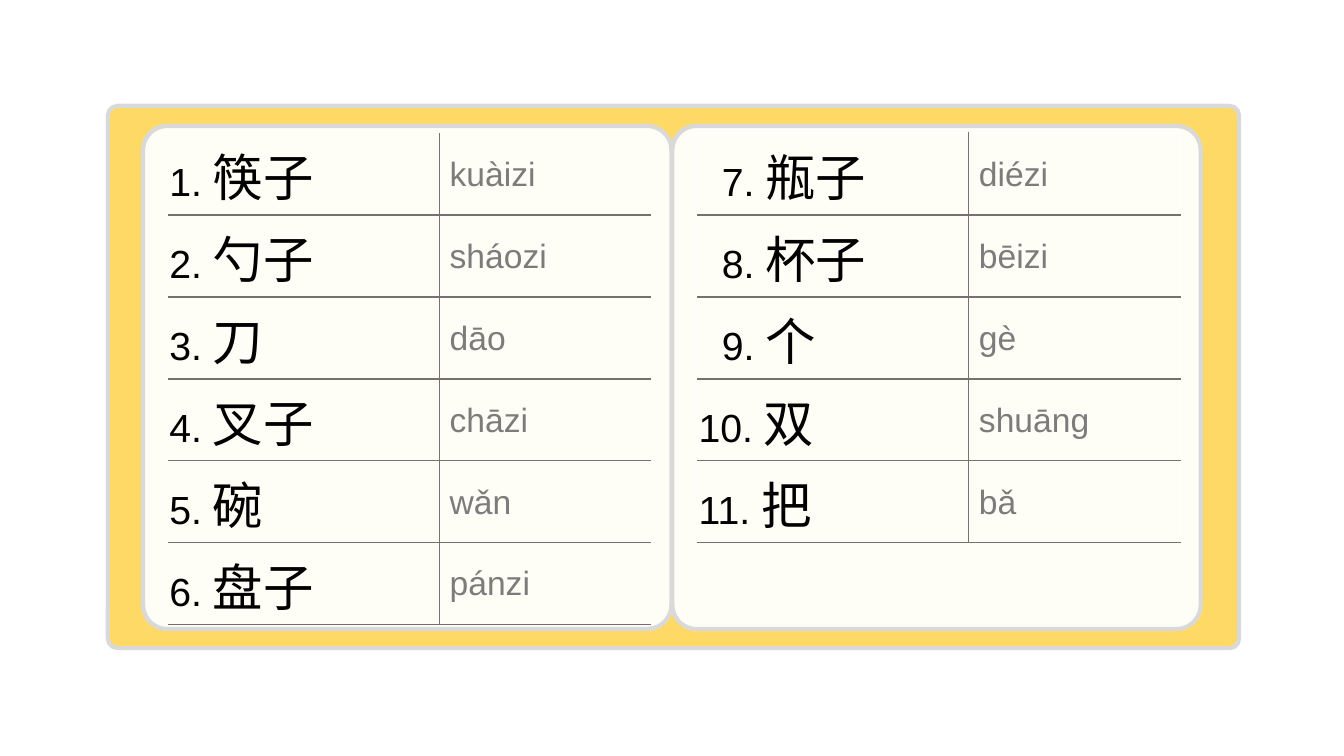
from dataclasses import dataclass
from typing import Optional

from lxml import etree
from pptx import Presentation, util as u
from pptx.dml.color import RGBColor
from pptx.enum import shapes, text
from pptx.oxml.ns import qn

COLORS = {"card": "FFD966", "panel": "FFFEF6", "edge": "D9D9D9", "rule": "767171",
          "white": "FFFFFF", "word": "000000", "pinyin": "7C7C7C"}
LATIN, HANZI = "Arial", "Noto Sans CJK SC"
SLIDE_W, SLIDE_H = u.Inches(13.33), u.Inches(7.5)

# Layout, in percent of the slide's width or height
PANEL_X, PANEL_STEP = 10.65, 39.38
TABLE_INSET, TABLE_TOP = 1.88, 17.6
COLUMNS, ROW = (20.18, 15.75), 10.84

CELL = {"margin_left": u.Inches(0.01), "margin_right": u.Inches(0.01),
        "margin_top": u.Inches(0.01), "margin_bottom": 0,
        "vertical_anchor": text.MSO_ANCHOR.MIDDLE}
NUMBER_FONT = {"size": u.Pt(28), "name": LATIN}
HANZI_FONT = {"size": u.Pt(36), "name": HANZI}
PINYIN_FONT = {"size": u.Pt(24), "name": LATIN}
PLAIN_TABLE = {"first_row": False, "horz_banding": False}
PINYIN_INDENT = u.Inches(0.1)
DIGIT_INDENT = u.Inches(0.23)  # lines one-digit numbers up with two-digit ones


@dataclass
class Box:
    left: float
    top: float
    width: float
    height: float
    corner: float
    fill: str


@dataclass
class WordList:
    first: int
    words: list[tuple[str, str]]
    outline: Optional[str]


LISTS = [
    WordList(1, [("筷子", "kuàizi"), ("勺子", "sháozi"), ("刀", "dāo"),
                 ("叉子", "chāzi"), ("碗", "wǎn"), ("盘子", "pánzi")], None),
    WordList(7, [("瓶子", "diézi"), ("杯子", "bēizi"), ("个", "ɡè"),
                 ("双", "shuānɡ"), ("把", "bǎ")], "white"),
]
BOXES = [Box(8.03, 14, 84.17, 71.73, 0.018, "card")] + [
    Box(PANEL_X + i * PANEL_STEP, 16.67, 39.31, 66.53, 0.048, "panel")
    for i in range(len(LISTS))]


def across(share: float) -> int:
    return round(SLIDE_W * share / 100)


def down(share: float) -> int:
    return round(SLIDE_H * share / 100)


def rgb(name: str) -> RGBColor:
    return RGBColor.from_string(COLORS[name])


def apply(target, values: dict) -> None:
    for name, value in values.items():
        setattr(target, name, value)


def draw_box(group, box: Box) -> None:
    sp = group.shapes.add_shape(
        shapes.MSO_SHAPE.ROUNDED_RECTANGLE, across(box.left), down(box.top),
        across(box.width), down(box.height))
    sp.adjustments[0] = box.corner
    sp.shadow.inherit = False
    sp.fill.solid()
    sp.fill.fore_color.rgb = rgb(box.fill)
    sp.line.color.rgb = rgb("edge")
    sp.line.width = u.Pt(3)


def add_run(p, wording: str, font: dict, color: str) -> None:
    r = p.add_run()
    r.text = wording
    apply(r.font, font)
    r.font.color.rgb = rgb(color)
    etree.SubElement(r.font._element, qn("a:ea")).set("typeface", HANZI)


def set_borders(cell, borders: dict[str, Optional[str]]) -> None:
    tc_pr = cell._tc.get_or_add_tcPr()
    for i, (side, color) in enumerate(borders.items()):
        ln = etree.Element(qn(f"a:ln{side}"), w=str(u.Pt(1)))
        if color:
            fill = etree.SubElement(ln, qn("a:solidFill"))
            etree.SubElement(fill, qn("a:srgbClr"), val=COLORS[color])
        else:
            etree.SubElement(ln, qn("a:noFill"))
        tc_pr.insert(i, ln)


def draw_list(s, left: float, items: WordList) -> None:
    rows = len(items.words)
    table = s.shapes.add_table(
        rows, len(COLUMNS), across(left), down(TABLE_TOP),
        across(sum(COLUMNS)), down(ROW * rows)).table
    apply(table, PLAIN_TABLE)
    for column, width in zip(table.columns, COLUMNS):
        column.width = across(width)
    widest = len(str(items.first + rows - 1))

    for i, (hanzi, pinyin) in enumerate(items.words):
        table.rows[i].height = down(ROW)
        word_cell, pinyin_cell = table.rows[i].cells
        top = "rule" if i else items.outline
        for cell in (word_cell, pinyin_cell):
            apply(cell, CELL)
            cell.fill.background()
        set_borders(word_cell, {"L": items.outline, "R": "rule", "T": top, "B": "rule"})
        set_borders(pinyin_cell, {"L": "rule", "R": items.outline, "T": top, "B": "rule"})

        # Number and word, then pronunciation
        number = str(items.first + i)
        word_cell.margin_left += DIGIT_INDENT * (widest - len(number))
        p = word_cell.text_frame.paragraphs[0]
        add_run(p, f"{number}. ", NUMBER_FONT, "word")
        add_run(p, hanzi, HANZI_FONT, "word")
        pinyin_cell.margin_left = PINYIN_INDENT
        add_run(pinyin_cell.text_frame.paragraphs[0], pinyin, PINYIN_FONT, "pinyin")


def main() -> None:
    prs = Presentation()
    prs.slide_width, prs.slide_height = SLIDE_W, SLIDE_H
    s = prs.slides.add_slide(prs.slide_layouts[6])

    # Yellow card with two panels
    group = s.shapes.add_group_shape()
    for box in BOXES:
        draw_box(group, box)

    # Word lists
    for i, items in enumerate(LISTS):
        draw_list(s, PANEL_X + i * PANEL_STEP + TABLE_INSET, items)

    prs.save("out.pptx")


if __name__ == "__main__":
    main()
